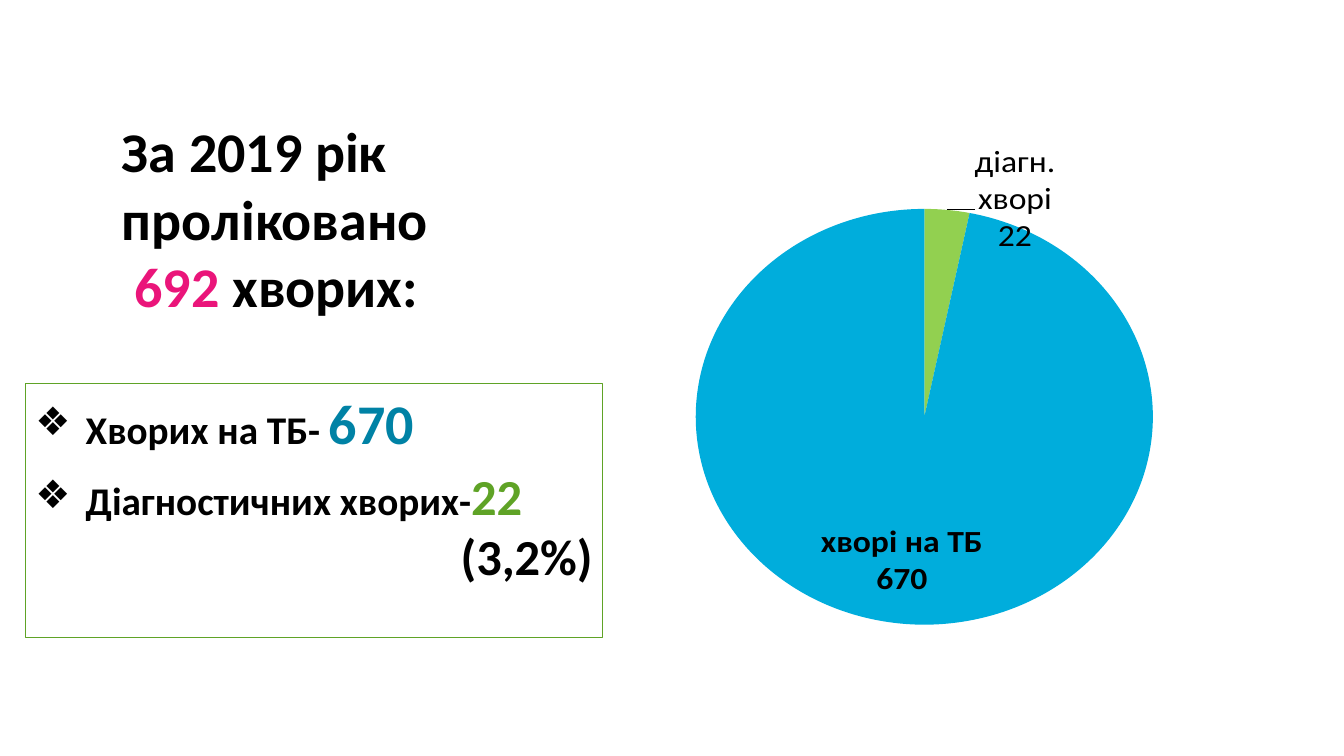
from lxml.etree import SubElement
from pptx import Presentation
from pptx.chart.data import CategoryChartData
from pptx.dml.color import RGBColor
from pptx.enum.chart import XL_CHART_TYPE, XL_LABEL_POSITION
from pptx.enum.text import MSO_ANCHOR, MSO_AUTO_SIZE, PP_ALIGN
from pptx.oxml import parse_xml
from pptx.oxml.ns import nsdecls, qn
from pptx.util import Inches, Pt

FONT = "Calibri"
BLACK, PINK, BLUE, GREEN = "000000", "EA157A", "0082A5", "5FA326"

# Each run: text, size, colour
TITLE = [[("За 2019 рік проліковано\v ", 40, BLACK), ("692 ", 40, PINK),
          ("хворих:", 40, BLACK)]]
PATIENTS = [
    [("Хворих на ТБ- ", 28, BLACK), ("670", 40, BLUE)],
    [("Діагностичних хворих-", 28, BLACK), ("22", 36, GREEN)],
    [("(3,2%)", 36, BLACK)],
]
# Each slice: category, value, colour
SLICES = [("", None, "7FD13B"), ("", None, PINK),
          ("діагностичні хворі", 22, "92D050"), ("хворі на ТБ", 670, "00ADDC")]
DIAGNOSTIC, TUBERCULOSIS = 2, 3
DIAGNOSTIC_LABEL = ["діагн.", "хворі", "22"]
LABEL_SHIFTS = {DIAGNOSTIC: {"x": 0.04, "y": 0.1},
                TUBERCULOSIS: {"x": -0.12, "y": -0.04}}
TITLE_BOX = (1.11, 0.71, 3.5, 2.5)
PATIENTS_BOX = (0.25, 3.8, 5.73, 2.52)
CHART_BOX = (5.88, 0.92, 6.71, 5.53)
PLOT_AREA = {"x": 0.075, "y": 0.13, "w": 0.83, "h": 0.82}


def rgb(color):
    return RGBColor.from_string(color)


def format_font(font, size, color, bold=True):
    values = {"name": FONT, "size": Pt(size), "bold": bold}
    for attribute, value in values.items():
        setattr(font, attribute, value)
    font.color.rgb = rgb(color)


def place(shape, box):
    for attribute, inches in zip(("left", "top", "width", "height"), box):
        setattr(shape, attribute, Inches(inches))


def fill_text(frame, paragraphs, anchor):
    frame.word_wrap = True
    frame.auto_size = MSO_AUTO_SIZE.NONE
    frame.vertical_anchor = anchor
    for index, runs in enumerate(paragraphs):
        paragraph = frame.paragraphs[0] if index == 0 else frame.add_paragraph()
        paragraph.alignment = PP_ALIGN.LEFT
        paragraph.space_before = Pt(0)
        for text, size, color in runs:
            for part, line in enumerate(text.split("\v")):
                if part:
                    paragraph.add_line_break()
                run = paragraph.add_run()
                run.text = line
                format_font(run.font, size, color)


def set_bullet(paragraph, symbol=None):
    properties = paragraph._p.get_or_add_pPr()
    indent = Inches(0.5) if symbol else 0
    properties.set("marL", str(indent))
    properties.set("indent", str(-indent))
    if symbol:
        SubElement(properties, qn("a:buChar")).set("char", symbol)
    else:
        SubElement(properties, qn("a:buNone"))


def manual_layout(values, inner=False):
    target = '<c:layoutTarget val="inner"/>' if inner else ""
    modes = '<c:xMode val="edge"/><c:yMode val="edge"/>' if inner else ""
    sizes = "".join(f'<c:{key} val="{value}"/>' for key, value in values.items())
    return parse_xml(f'<c:layout {nsdecls("c")}><c:manualLayout>'
                     f'{target}{modes}{sizes}</c:manualLayout></c:layout>')


def show_category_and_value(labels_element):
    """Show category over value in a c:dLbls or c:dLbl element."""
    for tag, shown in (("c:showLegendKey", "0"), ("c:showVal", "1"),
                       ("c:showCatName", "1"), ("c:showSerName", "0"),
                       ("c:showPercent", "0")):
        labels_element.find(qn(tag)).set("val", shown)
    separator = parse_xml(f'<c:separator {nsdecls("c")}>\n</c:separator>')
    last_flag = labels_element.find(qn("c:showBubbleSize"))
    if last_flag is None:
        last_flag = labels_element.find(qn("c:showPercent"))
    last_flag.addnext(separator)


def label_slices(series):
    labels = series.data_labels
    format_font(labels.font, 24, BLACK)
    show_category_and_value(labels._element)

    diagnostic = series.points[DIAGNOSTIC].data_label
    frame = diagnostic.text_frame
    for number, line in enumerate(DIAGNOSTIC_LABEL):
        paragraph = frame.paragraphs[0] if number == 0 else frame.add_paragraph()
        run = paragraph.add_run()
        run.text = line
        format_font(run.font, 24, BLACK, False)
    diagnostic.position = XL_LABEL_POSITION.OUTSIDE_END

    tuberculosis = series.points[TUBERCULOSIS].data_label
    format_font(tuberculosis.font, 24, BLACK)
    tuberculosis.position = XL_LABEL_POSITION.INSIDE_END

    for label in labels._element.findall(qn("c:dLbl")):
        number = label.find(qn("c:idx"))
        number.addnext(manual_layout(LABEL_SHIFTS[int(number.get("val"))]))
        show_category_and_value(label)


def add_pie(slide):
    data = CategoryChartData()
    data.categories = [category for category, _, _ in SLICES]
    data.add_series("Series 1", [value for _, value, _ in SLICES])
    chart = slide.shapes.add_chart(
        XL_CHART_TYPE.PIE, *map(Inches, CHART_BOX), data).chart
    chart.has_legend = False
    chart.has_title = False
    format_font(chart.font, 10, BLACK, False)

    plot_area = chart._chartSpace.chart.plotArea
    for layout in plot_area.findall(qn("c:layout")):
        plot_area.remove(layout)
    plot_area.insert(0, manual_layout(PLOT_AREA, inner=True))

    plot = chart.plots[0]
    plot.vary_by_categories = True
    series = plot.series[0]
    for index, (_, _, color) in enumerate(SLICES):
        fill = series.points[index].format.fill
        fill.solid()
        fill.fore_color.rgb = rgb(color)
    label_slices(series)


def main():
    deck = Presentation()
    deck.slide_width, deck.slide_height = Inches(13.33), Inches(7.5)
    slide = deck.slides.add_slide(deck.slide_layouts[1])

    title = slide.shapes.title
    place(title, TITLE_BOX)
    fill_text(title.text_frame, TITLE, MSO_ANCHOR.BOTTOM)

    add_pie(slide)

    patients = slide.placeholders[1]
    place(patients, PATIENTS_BOX)
    patients.line.color.rgb = rgb(GREEN)
    patients.line.width = Pt(0.75)
    fill_text(patients.text_frame, PATIENTS, MSO_ANCHOR.TOP)
    tuberculosis, diagnostic, share = patients.text_frame.paragraphs
    diagnostic.space_before = Pt(7)
    share.alignment = PP_ALIGN.RIGHT
    for paragraph, symbol in ((tuberculosis, "❖"), (diagnostic, "❖"), (share, None)):
        set_bullet(paragraph, symbol)

    deck.save("out.pptx")


if __name__ == "__main__":
    main()
